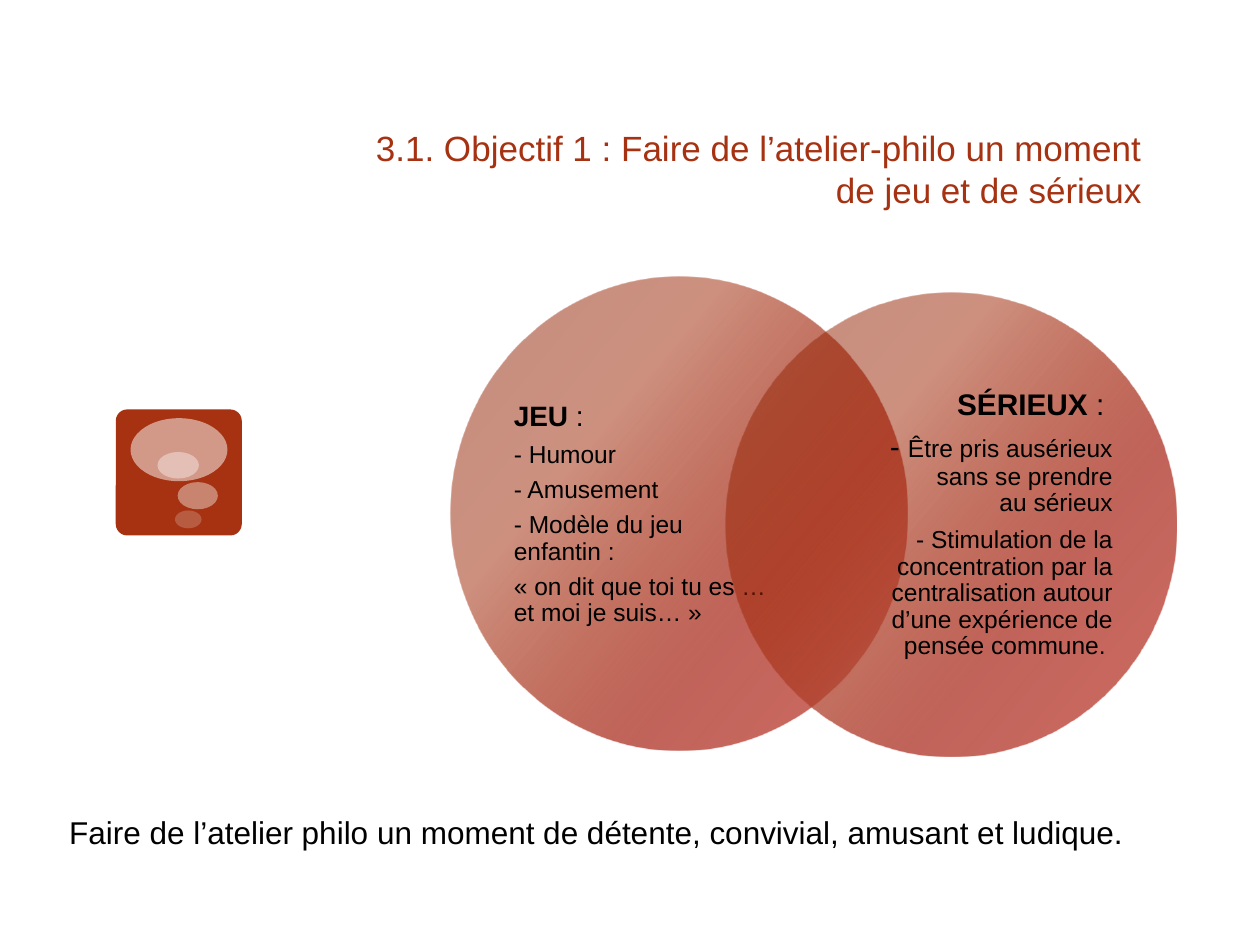
from dataclasses import dataclass

from lxml import etree
from pptx import Presentation
from pptx.dml.color import RGBColor
from pptx.enum.shapes import MSO_SHAPE
from pptx.enum.text import MSO_ANCHOR, PP_ALIGN
from pptx.oxml.ns import qn
from pptx.util import Pt

ELLIPSE, ROUNDED = MSO_SHAPE.OVAL, MSO_SHAPE.ROUNDED_RECTANGLE
TOP, MIDDLE, BOTTOM = MSO_ANCHOR.TOP, MSO_ANCHOR.MIDDLE, MSO_ANCHOR.BOTTOM
LEFT, RIGHT = PP_ALIGN.LEFT, PP_ALIGN.RIGHT

FONT = "Arial"
COLORS = {
    "rust": "A63212", "white": "FFFFFF", "black": "000000",
    "coral": "C6554A", "rose": "BE5C52", "brick": "9E2200", "maroon": "881D00",
}
# Position, colour and opacity in percent
VENN_STOPS = [(0, "coral", 85), (33, "rose", 95), (67, "brick", 50), (100, "maroon", 50)]
VENN_ANGLE = 220
VENN_FORMAT = {"line_spacing": 0.9}
SPACE_RATIO = 0.35  # space after a paragraph, relative to its text size


@dataclass
class Box:
    left: float
    top: float
    width: float
    height: float

    def lengths(self) -> list:
        return [Pt(v) for v in (self.left, self.top, self.width, self.height)]


@dataclass
class Bubble:
    box: Box
    opacity: int


@dataclass
class Span:
    text: str
    size: float
    bold: bool = False


@dataclass
class Circle:
    box: Box
    text_box: Box
    align: PP_ALIGN
    paras: list[list[Span]]


def add_plain_shape(page, kind, box: Box):
    shape = page.shapes.add_shape(kind, *box.lengths())
    shape.shadow.inherit = False
    shape.line.fill.background()
    return shape


def add_color(parent, color: str, opacity: int) -> None:
    node = etree.SubElement(parent, qn("a:srgbClr"), val=COLORS[color])
    etree.SubElement(node, qn("a:alpha"), val=str(opacity * 1000))


def replace_fill(shape, tag: str):
    """Put an empty fill element in place of the solid one."""
    shape.fill.solid()
    solid = shape.element.spPr.find(qn("a:solidFill"))
    fill = etree.Element(qn(tag))
    solid.getparent().replace(solid, fill)
    return fill


def add_bubble(page, bubble: Bubble) -> None:
    shape = add_plain_shape(page, ELLIPSE, bubble.box)
    add_color(replace_fill(shape, "a:solidFill"), "white", bubble.opacity)


def add_text(page, box: Box, paras: list[list[Span]], color: str, align=LEFT,
             anchor=TOP, margins=(7.2, 3.6), para_format=None, space_ratio=0.0) -> None:
    frame = page.shapes.add_textbox(*box.lengths()).text_frame
    side, edge = Pt(margins[0]), Pt(margins[1])
    frame_format = {"word_wrap": True, "vertical_anchor": anchor,
                    "margin_left": side, "margin_right": side,
                    "margin_top": edge, "margin_bottom": edge}
    for name, value in frame_format.items():
        setattr(frame, name, value)
    for index, spans in enumerate(paras):
        para = frame.add_paragraph() if index else frame.paragraphs[0]
        values = {"alignment": align, "space_after": Pt(space_ratio * spans[0].size),
                  **(para_format or {})}
        for name, value in values.items():
            setattr(para, name, value)
        for span in spans:
            add_span(para, span, color)


def add_span(para, span: Span, color: str) -> None:
    for index, line in enumerate(span.text.split("\n")):
        if index:
            para.add_line_break()
        run = para.add_run()
        run.text = line
        values = {"name": FONT, "size": Pt(span.size), "bold": span.bold}
        for name, value in values.items():
            setattr(run.font, name, value)
        run.font.color.rgb = RGBColor.from_string(COLORS[color])


def add_circle(page, circle: Circle) -> None:
    shape = add_plain_shape(page, ELLIPSE, circle.box)
    gradient = replace_fill(shape, "a:gradFill")
    stops = etree.SubElement(gradient, qn("a:gsLst"))
    for position, color, opacity in VENN_STOPS:
        stop = etree.SubElement(stops, qn("a:gs"), pos=str(position * 1000))
        add_color(stop, color, opacity)
    etree.SubElement(gradient, qn("a:lin"), ang=str(VENN_ANGLE * 60000), scaled="0")
    add_text(page, circle.text_box, circle.paras, "black", circle.align, MIDDLE,
             (0, 0), VENN_FORMAT, SPACE_RATIO)


TITLE = "3.1. Objectif 1 : Faire de l’atelier-philo un moment de jeu et de sérieux"
CAPTION = "Faire de l’atelier philo un moment de détente, convivial, amusant et ludique."
BUBBLES = [
    Bubble(Box(74.6, 239, 55.4, 36), 50),
    Bubble(Box(101.5, 275.5, 23, 15.5), 40),
    Bubble(Box(100, 291.7, 15.2, 10.2), 20),
    Bubble(Box(90, 258.3, 23.7, 15.2), 38),
]
CIRCLES = [
    Circle(Box(257.3, 158.4, 261, 270.3), Box(293.6, 190.8, 150.5, 206.6), LEFT, [
        [Span("JEU", 16, True), Span(" :", 16)],
        [Span("- Humour", 14)],
        [Span("- Amusement", 14)],
        [Span("- Modèle du jeu enfantin :", 14)],
        [Span("« on dit que toi tu es …et moi je suis… »", 14)],
    ]),
    Circle(Box(414.5, 167, 258, 265.3), Box(487.6, 198.7, 148.3, 202.3), RIGHT, [
        [Span("SÉRIEUX", 17, True), Span(" : ", 17)],
        [Span("- ", 17), Span("Être pris ausérieux\nsans se prendre\nau sérieux", 14)],
        [Span("- Stimulation de la concentration par la centralisation autour "
              "d’une expérience de pensée commune. ", 14)],
    ]),
]


def main() -> None:
    deck = Presentation()
    deck.slide_width, deck.slide_height = Pt(720), Pt(540)
    page = deck.slides.add_slide(deck.slide_layouts[6])

    # Thought-bubble emblem
    tile = add_plain_shape(page, ROUNDED, Box(66.2, 234, 72, 72))
    tile.adjustments[0] = 0.09
    tile.fill.solid()
    tile.fill.fore_color.rgb = RGBColor.from_string(COLORS["rust"])
    for bubble in BUBBLES:
        add_bubble(page, bubble)

    # Title
    add_text(page, Box(189.4, 54, 470.2, 69.8), [[Span(TITLE, 20)]], "rust", RIGHT, BOTTOM)

    # Overlapping circles
    for circle in CIRCLES:
        add_circle(page, circle)

    # Caption
    add_text(page, Box(32.4, 460.8, 670.3, 51.1), [[Span(CAPTION, 18)]], "black")

    deck.save("out.pptx")


if __name__ == "__main__":
    main()
